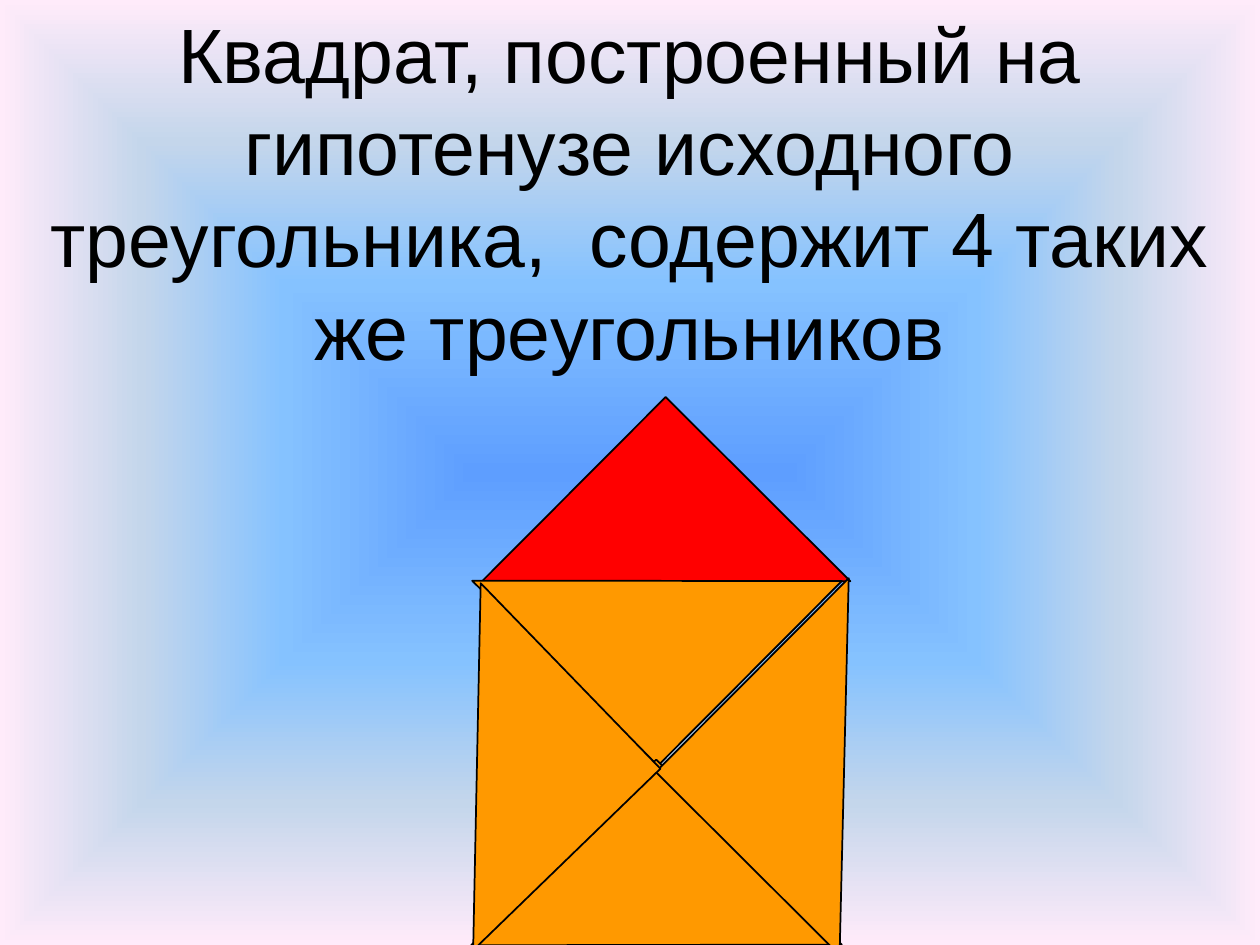
from pptx import Presentation
from pptx.dml.color import RGBColor
from pptx.enum.shapes import MSO_SHAPE
from pptx.enum.text import MSO_ANCHOR, PP_ALIGN
from pptx.oxml import parse_xml
from pptx.oxml.ns import nsdecls, qn
from pptx.util import Inches, Pt

BLACK = RGBColor(0x00, 0x00, 0x00)
RED = RGBColor(0xFF, 0x00, 0x00)
ORANGE = RGBColor(0xFF, 0x99, 0x00)
DEEP_BLUE = RGBColor(0x5E, 0x9E, 0xFF)
SKY = RGBColor(0x85, 0xC2, 0xFF)
MIST = RGBColor(0xC4, 0xD6, 0xEB)
PINK = RGBColor(0xFF, 0xEB, 0xFA)

TITLE = "Квадрат, построенный на гипотенузе исходного треугольника,  содержит 4 таких же треугольников"
GLOW = [(0, DEEP_BLUE), (40, SKY), (70, MIST), (100, PINK)]
HYPOTENUSE_SQUARE = [
    (20.86, 18.44, 8.28, 8.32, 314.9),
    (20.84, 30, 8.32, 8.32, 134.9),
    (26.8, 24.34, 8.24, 8.68, 44.9),
    (15.14, 24.34, 8.2, 8.28, 225.9),
]


class Board:
    COLS, ROWS = 40, 30
    FONT = "Arial"

    def __init__(self, prs):
        self.s = prs.slides.add_slide(prs.slide_layouts[6])
        self.col = prs.slide_width / self.COLS
        self.row = prs.slide_height / self.ROWS

    def box(self, x, y, w, h):
        return [round(v) for v in (x * self.col, y * self.row, w * self.col, h * self.row)]

    def background(self, stops):
        fill = self.s.background.fill
        fill.solid()
        gs = "".join(
            f'<a:gs pos="{pos * 1000}"><a:srgbClr val="{color}"/></a:gs>' for pos, color in stops
        )
        grad = parse_xml(
            f'<a:gradFill {nsdecls("a")} rotWithShape="1"><a:gsLst>{gs}</a:gsLst><a:path path="shape">'
            '<a:fillToRect l="50000" t="50000" r="50000" b="50000"/></a:path></a:gradFill>'
        )
        solid = next(self.s.element.iter(qn("a:solidFill")))
        solid.getparent().replace(solid, grad)

    def title(self, text, x, y, w, h):
        tf = self.s.shapes.add_textbox(*self.box(x, y, w, h)).text_frame
        tf.word_wrap = True
        tf.vertical_anchor = MSO_ANCHOR.MIDDLE
        p = tf.paragraphs[0]
        p.alignment = PP_ALIGN.CENTER
        p.line_spacing = Pt(52.75)
        r = p.add_run()
        r.text = text
        r.font.name = self.FONT
        r.font.size = Pt(44)
        r.font.color.rgb = BLACK

    def triangle(self, shapes, color, cx, cy, w, h, angle):
        sp = shapes.add_shape(
            MSO_SHAPE.RIGHT_TRIANGLE, *self.box(cx - w / 2, cy - h / 2, w, h)
        )
        sp.rotation = angle
        sp.shadow.inherit = False
        sp.fill.solid()
        sp.fill.fore_color.rgb = color
        sp.line.color.rgb = BLACK
        sp.line.width = Pt(1)

    def triangle_group(self, color, triangles):
        group = self.s.shapes.add_group_shape()
        for triangle in triangles:
            self.triangle(group.shapes, color, *triangle)


def main():
    prs = Presentation()
    prs.slide_width, prs.slide_height = Inches(10), Inches(7.5)
    board = Board(prs)
    board.background(GLOW)
    board.title(TITLE, 0, 0, board.COLS, 12.12)
    board.triangle(board.s.shapes, RED, 21.14, 18.46, 8.28, 8.28, 134.9)
    board.triangle_group(ORANGE, HYPOTENUSE_SQUARE)
    prs.save("out.pptx")


if __name__ == "__main__":
    main()
